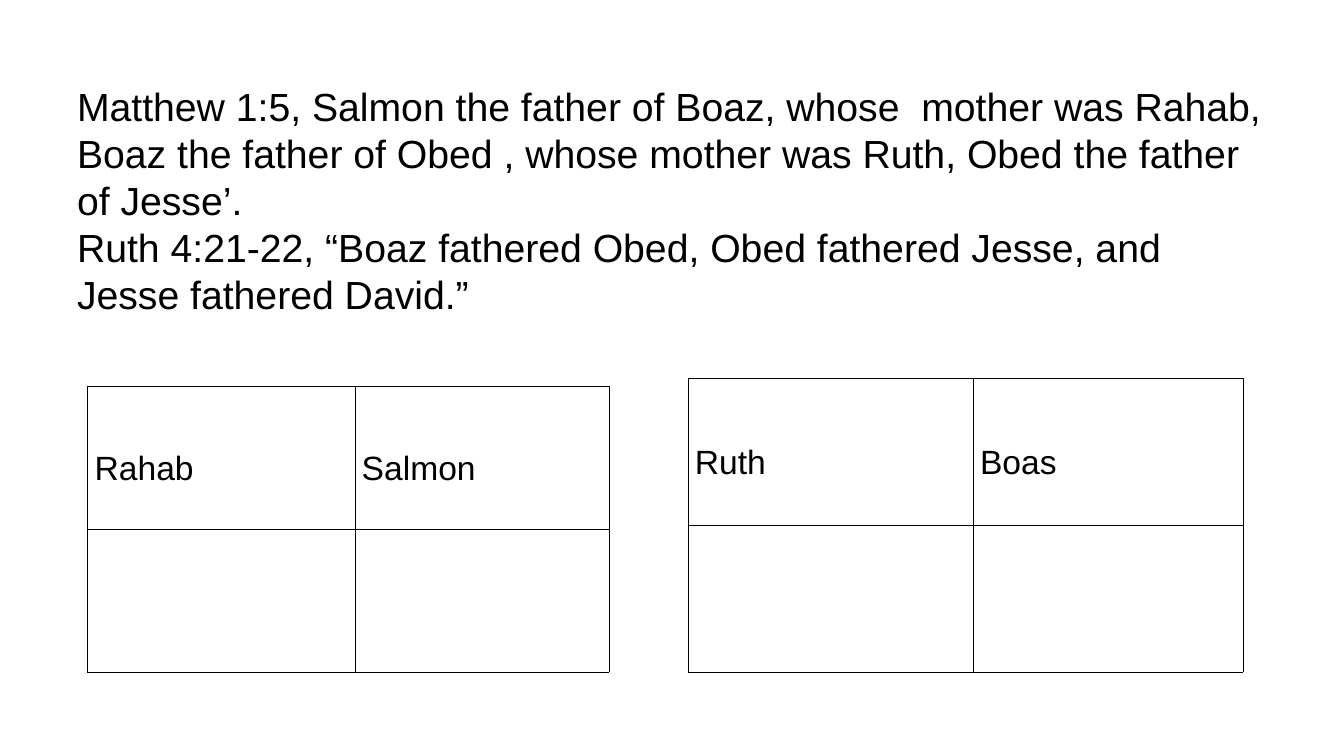
from lxml import etree
from pptx import Presentation
from pptx.dml.color import RGBColor
from pptx.enum import text
from pptx.oxml import ns
from pptx.util import Pt

BLACK = "000000"
FONT = "Arial"
VERSES = [
    "Matthew 1:5, Salmon the father of Boaz, whose  mother was Rahab, "
    "Boaz the father of Obed , whose mother was Ruth, Obed the father of Jesse’.",
    "Ruth 4:21-22, “Boaz fathered Obed, Obed fathered Jesse, and Jesse fathered David.”",
]


def color(value):
    return RGBColor.from_string(value)


def write(para, content, size, align, spacing):
    para.alignment = align
    para.line_spacing = spacing
    span = para.add_run()
    span.text = content
    span.font.name = FONT
    span.font.size = Pt(size)
    span.font.bold = False
    span.font.color.rgb = color(BLACK)


def add_border(cell, width):
    properties = cell._tc.get_or_add_tcPr()
    for position, side in enumerate(("lnL", "lnR", "lnT", "lnB")):
        line = etree.Element(ns.qn(f"a:{side}"), w=str(Pt(width)))
        fill = etree.SubElement(line, ns.qn("a:solidFill"))
        etree.SubElement(fill, ns.qn("a:srgbClr"), val=BLACK)
        properties.insert(position, line)


def add_verses(page, left, top, width, height):
    box = page.shapes.add_textbox(Pt(left), Pt(top), Pt(width), Pt(height))
    frame = box.text_frame
    frame.word_wrap = True
    frame.margin_top = frame.margin_bottom = 0
    for index, verse in enumerate(VERSES):
        para = frame.add_paragraph() if index else frame.paragraphs[0]
        write(para, verse, size=28, align=text.PP_ALIGN.LEFT, spacing=Pt(33.6))


def add_couple(page, left, top, widths, row_height, names):
    table = page.shapes.add_table(
        2, 2, Pt(left), Pt(top), Pt(sum(widths)), Pt(2 * row_height)
    ).table
    table.first_row = table.horz_banding = False
    for column, width in zip(table.columns, widths):
        column.width = Pt(width)
    for row in table.rows:
        row.height = Pt(row_height)
    for cell in table.iter_cells():
        cell.fill.background()
        cell.vertical_anchor = text.MSO_ANCHOR.MIDDLE
        cell.margin_left = cell.margin_right = Pt(5)
        cell.margin_top = cell.margin_bottom = Pt(1.5)
        add_border(cell, 0.28)
    for index, name in enumerate(names):
        para = table.cell(0, index).text_frame.paragraphs[0]
        write(para, name, size=24, align=text.PP_ALIGN.JUSTIFY, spacing=1.6)


def main():
    deck = Presentation()
    deck.slide_width, deck.slide_height = Pt(960), Pt(540)
    page = deck.slides.add_slide(deck.slide_layouts[6])
    add_verses(page, 48, 58.7, 864, 168)
    add_couple(page, 491.3, 270, (203.8, 193), 105, ("Ruth", "Boas"))
    add_couple(page, 62.6, 275.8, (190.8, 181.4), 102, ("Rahab", "Salmon"))
    deck.save("out.pptx")


if __name__ == "__main__":
    main()
